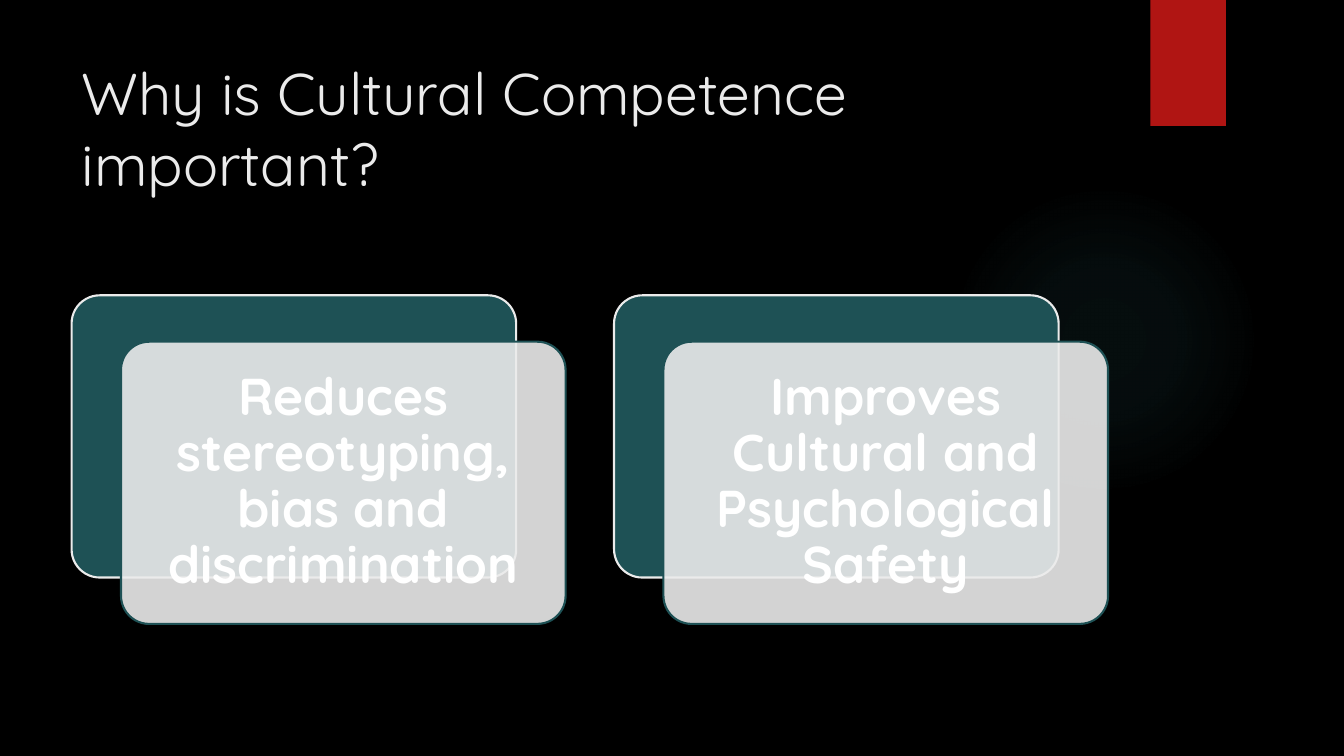
from lxml import etree
from pptx import Presentation
from pptx.dml.color import RGBColor
from pptx.enum import shapes, text
from pptx.oxml import ns
from pptx.util import Inches, Pt

FONT = "Quicksand"
BLACK, PALE, WHITE = "000000", "EBEBEB", "FFFFFF"
TEAL, RED, GLOW = "1E5155", "B01513", "50B9C1"
REASONS = [
    "Reduces stereotyping, bias and discrimination",
    "Improves Cultural and Psychological Safety",
]
CARD_LEFT, CARD_TOP, CARD_PITCH = 0.71, 2.93, 5.38
CARD_WIDTH, CARD_HEIGHT = 4.41, 2.8
FRONT_DX, FRONT_DY = 0.49, 0.46


def paint(color_format, hex_color):
    color_format.rgb = RGBColor.from_string(hex_color)


def add_alpha(color_element, percent):
    alpha = etree.SubElement(color_element, ns.qn("a:alpha"))
    alpha.set("val", str(percent * 1000))


def add_block(slide, kind, left, top, width, height, fill, line=None, opacity=100):
    block = slide.shapes.add_shape(
        kind, Inches(left), Inches(top), Inches(width), Inches(height))
    block.shadow.inherit = False
    block.fill.solid()
    paint(block.fill.fore_color, fill)
    if opacity < 100:
        add_alpha(block._element.spPr.find(".//" + ns.qn("a:srgbClr")), opacity)
    if line:
        paint(block.line.color, line)
        block.line.width = Pt(1.5)
    else:
        block.line.fill.background()
    return block


def add_glow(slide):
    glow = add_block(slide, shapes.MSO_SHAPE.OVAL, 9.41, 1.83, 3.08, 3.08, GLOW)
    glow.fill.gradient()
    gradient = glow._element.spPr.find(ns.qn("a:gradFill"))
    for child in list(gradient):
        gradient.remove(child)
    # Radial stops: position and opacity in percent
    stops = etree.SubElement(gradient, ns.qn("a:gsLst"))
    for position, opacity in [(0, 7), (36, 6), (69, 0)]:
        stop = etree.SubElement(stops, ns.qn("a:gs"), pos=str(position * 1000))
        add_alpha(etree.SubElement(stop, ns.qn("a:srgbClr"), val=GLOW), opacity)
    circle = etree.SubElement(gradient, ns.qn("a:path"), path="circle")
    center = etree.SubElement(circle, ns.qn("a:fillToRect"))
    for side in "ltrb":
        center.set(side, "50000")


def write(frame, words, size, color, bold=False, align=text.PP_ALIGN.LEFT,
          spacing=1.0, inset=None):
    frame.word_wrap = True
    frame.auto_size = text.MSO_AUTO_SIZE.NONE
    frame.vertical_anchor = text.MSO_ANCHOR.MIDDLE
    if inset is not None:
        frame.margin_left = frame.margin_right = Inches(inset)
        frame.margin_top = frame.margin_bottom = Inches(inset)
    paragraph = frame.paragraphs[0]
    paragraph.alignment = align
    paragraph.line_spacing = spacing
    run = paragraph.add_run()
    run.text = words
    run.font.name = FONT
    run.font.size = Pt(size)
    run.font.bold = bold
    paint(run.font.color, color)


def add_title(slide, words):
    title = slide.shapes.title
    title.left, title.top = Inches(0.71), Inches(0.5)
    title.width, title.height = Inches(10.29), Inches(1.53)
    write(title.text_frame, words, 42, PALE)


def add_card(slide, left, reason):
    rounded = shapes.MSO_SHAPE.ROUNDED_RECTANGLE
    back = add_block(slide, rounded, left, CARD_TOP, CARD_WIDTH, CARD_HEIGHT,
                     TEAL, line=PALE)
    front = add_block(slide, rounded, left + FRONT_DX, CARD_TOP + FRONT_DY,
                      CARD_WIDTH, CARD_HEIGHT, PALE, line=TEAL, opacity=90)
    for layer in (back, front):
        layer.adjustments[0] = 0.1
    write(front.text_frame, reason, 37, WHITE, bold=True,
          align=text.PP_ALIGN.CENTER, spacing=0.9, inset=0.15)


def main():
    deck = Presentation()
    deck.slide_width, deck.slide_height = Inches(13.33), Inches(7.5)
    slide = deck.slides.add_slide(deck.slide_layouts[5])
    slide.background.fill.solid()
    paint(slide.background.fill.fore_color, BLACK)

    # Backdrop
    add_glow(slide)
    add_block(slide, shapes.MSO_SHAPE.RECTANGLE, 11.41, 0, 0.75, 1.25, RED)

    # Content
    add_title(slide, "Why is Cultural Competence important?")
    for column, reason in enumerate(REASONS):
        add_card(slide, CARD_LEFT + column * CARD_PITCH, reason)

    deck.save("out.pptx")


if __name__ == "__main__":
    main()
